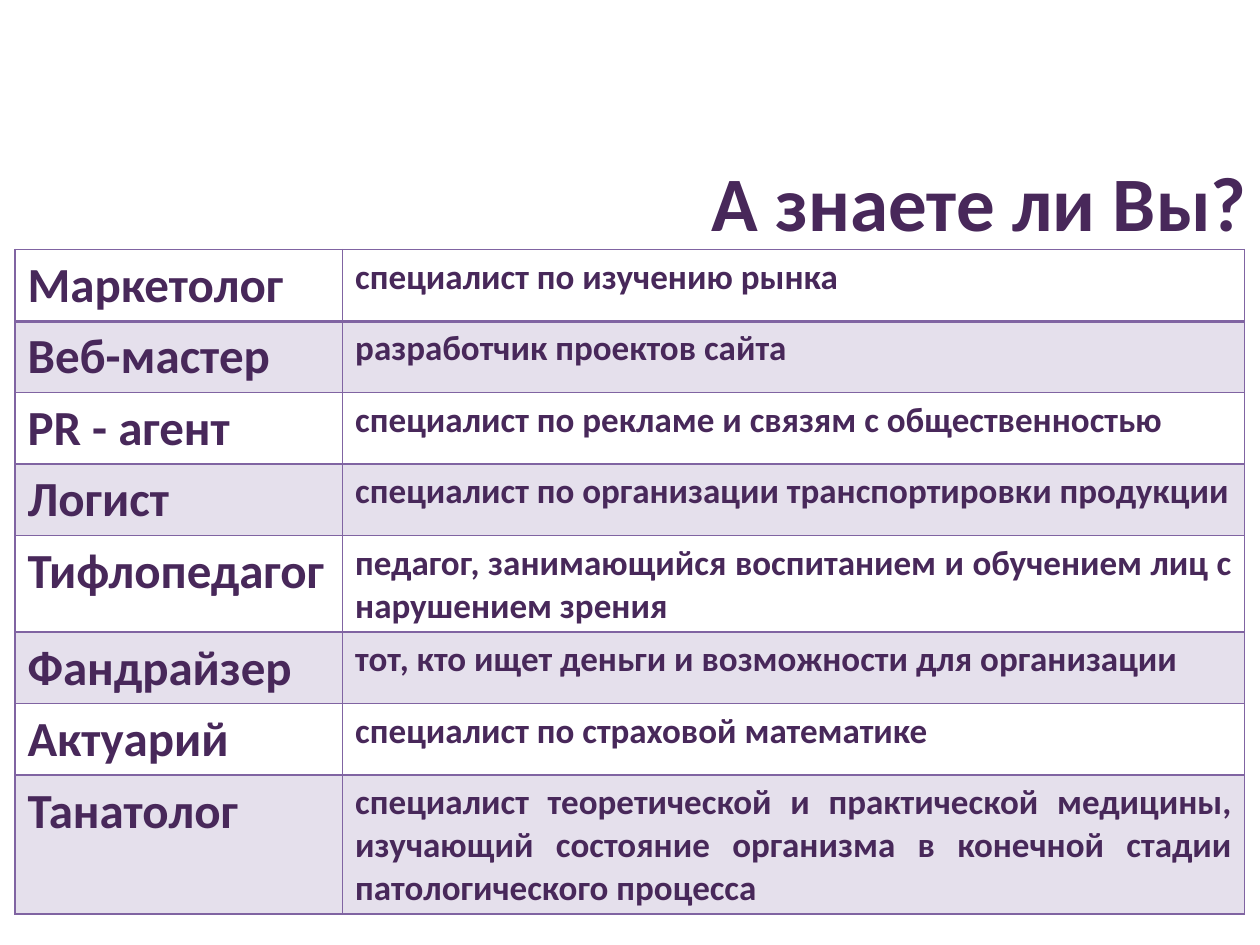
from lxml import etree
from pptx import Presentation
from pptx.dml.color import RGBColor
from pptx.enum.text import MSO_ANCHOR, MSO_AUTO_SIZE, PP_ALIGN
from pptx.oxml.ns import qn
from pptx.util import Pt

LEFT, RIGHT, JUSTIFY = PP_ALIGN.LEFT, PP_ALIGN.RIGHT, PP_ALIGN.JUSTIFY
TOP = MSO_ANCHOR.TOP
GROW = MSO_AUTO_SIZE.SHAPE_TO_FIT_TEXT

COLORS = {"text": "48285A", "accent": "8064A2"}
BAND_ALPHA = 20
COLUMN_WIDTHS = (187.2, 515.5)
COLUMN_STYLES = ((28, LEFT), (20, JUSTIFY))
ROW_HEIGHT = 29.5

PROFESSIONS = [
    ("Маркетолог", "специалист по изучению рынка"),
    ("Веб-мастер", "разработчик проектов сайта"),
    ("PR - агент", "специалист по рекламе и связям с общественностью"),
    ("Логист", "специалист по организации транспортировки продукции"),
    ("Тифлопедагог", "педагог, занимающийся воспитанием и обучением лиц с нарушением зрения"),
    ("Фандрайзер", "тот, кто ищет деньги и возможности для организации"),
    ("Актуарий", "специалист по страховой математике"),
    ("Танатолог", "специалист теоретической и практической медицины, изучающий "
                  "состояние организма в конечной стадии патологического процесса"),
]


def write_text(text_frame, text, size, alignment):
    paragraph = text_frame.paragraphs[0]
    paragraph.alignment = alignment
    run = paragraph.add_run()
    run.text = text
    font_format = {"name": "Calibri", "size": Pt(size), "bold": True}
    for name, value in font_format.items():
        setattr(run.font, name, value)
    run.font.color.rgb = RGBColor.from_string(COLORS["text"])


def style_cell(cell, banded, bottom_width):
    properties = cell._tc.get_or_add_tcPr()
    if banded:
        cell.fill.solid()
        cell.fill.fore_color.rgb = RGBColor.from_string(COLORS["accent"])
        color = properties.find(".//" + qn("a:srgbClr"))
        etree.SubElement(color, qn("a:alpha"), val=str(BAND_ALPHA * 1000))
    else:
        cell.fill.background()
    # Borders come before the fill in the cell properties
    widths = {"a:lnL": 1, "a:lnR": 1, "a:lnT": 1, "a:lnB": bottom_width}
    for position, (tag, width) in enumerate(widths.items()):
        line = etree.Element(qn(tag), w=str(Pt(width)))
        fill = etree.SubElement(line, qn("a:solidFill"))
        etree.SubElement(fill, qn("a:srgbClr"), val=COLORS["accent"])
        properties.insert(position, line)


presentation = Presentation()
presentation.slide_width, presentation.slide_height = Pt(720), Pt(540)
slide = presentation.slides.add_slide(presentation.slide_layouts[6])

# Title
title = slide.shapes.add_textbox(Pt(396), Pt(85), Pt(324), Pt(60.5))
frame_format = {"word_wrap": False, "auto_size": GROW, "vertical_anchor": TOP}
for name, value in frame_format.items():
    setattr(title.text_frame, name, value)
write_text(title.text_frame, "А знаете ли Вы?", 44, RIGHT)

# Table of professions, rows grow to fit their text
table = slide.shapes.add_table(
    len(PROFESSIONS), len(COLUMN_WIDTHS), Pt(8.6), Pt(142.6),
    Pt(sum(COLUMN_WIDTHS)), Pt(ROW_HEIGHT * len(PROFESSIONS))).table
for column, width in zip(table.columns, COLUMN_WIDTHS):
    column.width = Pt(width)
for row_index, texts in enumerate(PROFESSIONS):
    table.rows[row_index].height = Pt(ROW_HEIGHT)
    for column_index, text in enumerate(texts):
        cell = table.cell(row_index, column_index)
        write_text(cell.text_frame, text, *COLUMN_STYLES[column_index])
        style_cell(cell, row_index % 2 == 1, 2 if row_index == 0 else 1)

presentation.save("out.pptx")
